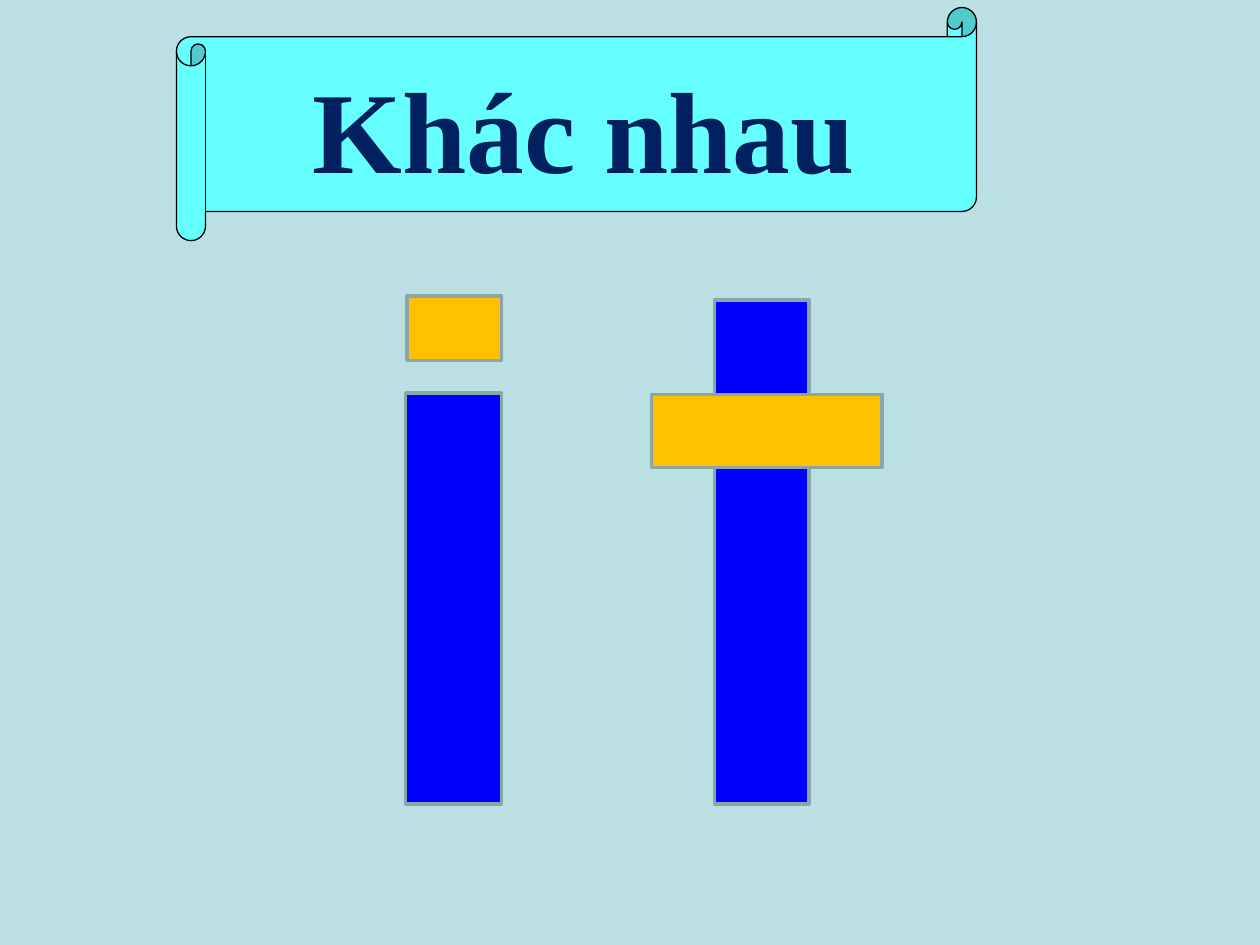
import pptx
import pptx.dml.color
import pptx.enum.shapes
import pptx.enum.text
import pptx.util

Inches = pptx.util.Inches
Pt = pptx.util.Pt
RGBColor = pptx.dml.color.RGBColor
Preset = pptx.enum.shapes.MSO_SHAPE

PALE_TEAL = RGBColor(0xBB, 0xE0, 0xE3)
CYAN = RGBColor(0x66, 0xFF, 0xFF)
BLACK = RGBColor(0x00, 0x00, 0x00)
NAVY = RGBColor(0x00, 0x20, 0x60)
BLUE = RGBColor(0x00, 0x00, 0xFF)
AMBER = RGBColor(0xFF, 0xC0, 0x00)
GREY_TEAL = RGBColor(0x8A, 0xA6, 0xA8)

deck = pptx.Presentation()
deck.slide_width = Inches(10)
deck.slide_height = Inches(7.5)
slide = deck.slides.add_slide(deck.slide_layouts[5])
slide.background.fill.solid()
slide.background.fill.fore_color.rgb = PALE_TEAL


def add_part(preset, box, fill, outline, weight):
    part = slide.shapes.add_shape(preset, *map(Inches, box))
    part.shadow.inherit = False
    part.fill.solid()
    part.fill.fore_color.rgb = fill
    part.line.color.rgb = outline
    part.line.width = Pt(weight)
    return part


scroll = add_part(Preset.HORIZONTAL_SCROLL, (1.4, 0.06, 6.35, 1.85), CYAN, BLACK, 0.75)
scroll.adjustments[0] = 0.125

heading = slide.shapes.title
scroll._element.addnext(heading._element)
heading_place = {"left": 2.1, "top": 0.41, "width": 5.07, "height": 1.21}
for side, length in heading_place.items():
    setattr(heading, side, Inches(length))

heading_frame = heading.text_frame
heading_frame.text = "Khác nhau"
frame_format = {
    "word_wrap": True,
    "auto_size": pptx.enum.text.MSO_AUTO_SIZE.NONE,
    "vertical_anchor": pptx.enum.text.MSO_ANCHOR.TOP,
}
for name, value in frame_format.items():
    setattr(heading_frame, name, value)

heading_line = heading_frame.paragraphs[0]
heading_line.alignment = pptx.enum.text.PP_ALIGN.CENTER
heading_font = heading_line.runs[0].font
font_format = {"name": "Times New Roman", "size": Pt(66), "bold": True}
for name, value in font_format.items():
    setattr(heading_font, name, value)
heading_font.color.rgb = NAVY

letter_strokes = [
    ((3.22, 3.12, 0.76, 3.26), BLUE),
    ((3.23, 2.35, 0.75, 0.51), AMBER),
    ((5.67, 2.38, 0.75, 4), BLUE),
    ((5.17, 3.13, 1.83, 0.58), AMBER),
]
for box, colour in letter_strokes:
    add_part(Preset.RECTANGLE, box, colour, GREY_TEAL, 2)

deck.save("out.pptx")
